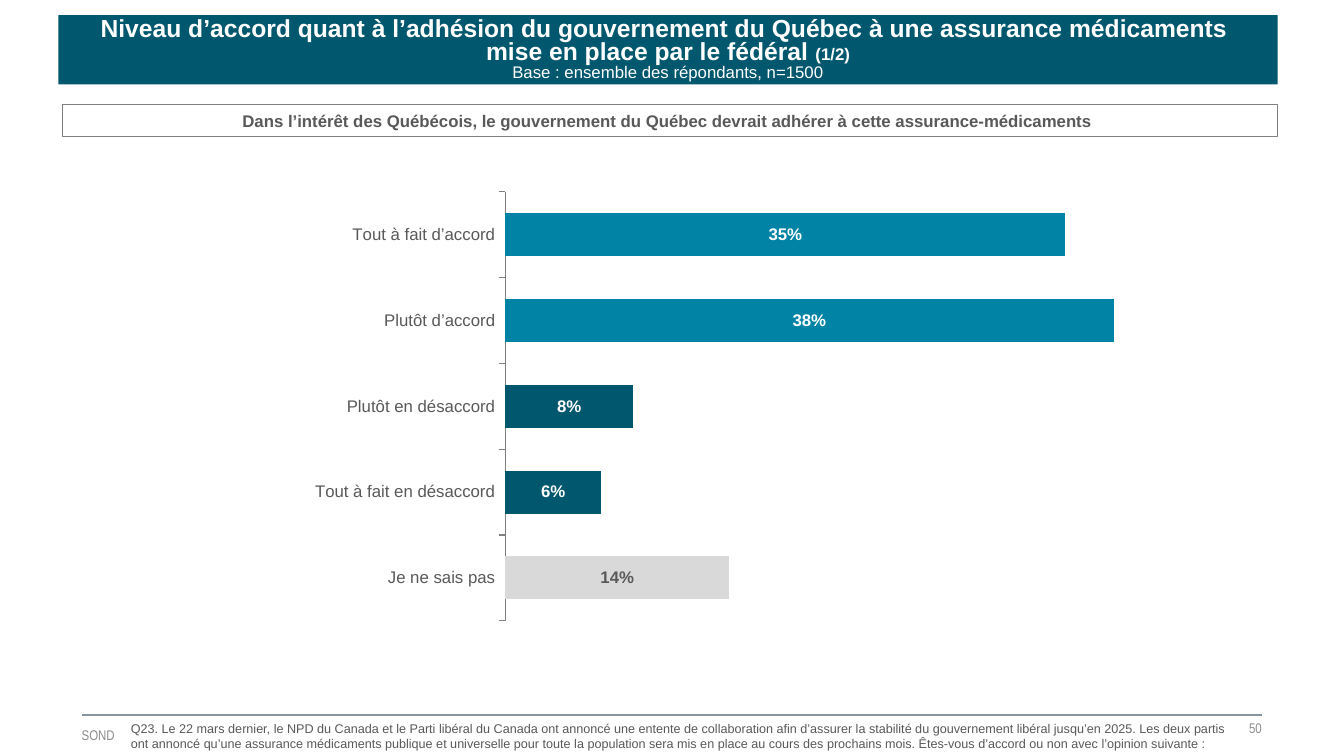
from lxml.etree import SubElement
from pptx import Presentation
from pptx.chart.data import CategoryChartData
from pptx.dml.color import RGBColor
from pptx.enum.chart import XL_CHART_TYPE, XL_LABEL_POSITION, XL_TICK_LABEL_POSITION, XL_TICK_MARK
from pptx.enum.shapes import MSO_CONNECTOR, MSO_SHAPE
from pptx.enum.text import MSO_ANCHOR, MSO_AUTO_SIZE, PP_ALIGN
from pptx.oxml import parse_xml
from pptx.oxml.ns import nsdecls, qn
from pptx.util import Cm, Pt

DARK_TEAL, TEAL, PALE = "00576E", "0083A5", "D9D9D9"
WHITE, TEXT, FOOTER, BORDER, RULE = "FFFFFF", "595959", "8C8C8C", "808080", "88959E"

ANSWERS = [
    ("Tout à fait d’accord", 0.35, TEAL),
    ("Plutôt d’accord", 0.38, TEAL),
    ("Plutôt en désaccord", 0.08, DARK_TEAL),
    ("Tout à fait en désaccord", 0.06, DARK_TEAL),
    ("Je ne sais pas", 0.14, PALE),
]
HEADLINE = [
    [("Niveau d’accord quant à l’adhésion du gouvernement du Québec à une assurance médicaments ", 17.6, True)],
    [("mise en place par le fédéral ", 17.6, True), ("(1/2)", 12, True)],
    [("Base : ensemble des répondants, n=1500", 12, False)],
]
STATEMENT = "Dans l’intérêt des Québécois, le gouvernement du Québec devrait adhérer à cette assurance-médicaments "
QUESTION = (
    "Q23. Le 22 mars dernier, le NPD du Canada et le Parti libéral du Canada ont annoncé une entente de "
    "collaboration afin d’assurer la stabilité du gouvernement libéral jusqu’en 2025. Les deux partis ont annoncé "
    "qu’une assurance médicaments publique et universelle pour toute la population sera mis en place au cours des "
    "prochains mois. Êtes-vous d’accord ou non avec l’opinion suivante :"
)


def rgb(code):
    return RGBColor.from_string(code)


def apply(target, values):
    for name, value in values.items():
        setattr(target, name, value)


class SurveySlide:
    """Draws the parts of a survey result slide in one style."""

    def __init__(self, deck, font="Arial"):
        self.slide = deck.slides.add_slide(deck.slide_layouts[5])
        self.font = font

    def style(self, font, size, color, bold=False, name=None):
        apply(font, {"name": name or self.font, "size": Pt(size), "bold": bold})
        font.color.rgb = rgb(color)

    def frame(self, frame, margins=None):
        apply(frame, {"word_wrap": True, "auto_size": MSO_AUTO_SIZE.NONE, "vertical_anchor": MSO_ANCHOR.MIDDLE})
        if margins is not None:
            sides = ("left", "top", "right", "bottom")
            apply(frame, {f"margin_{side}": Cm(margins) for side in sides})
        return frame.paragraphs[0]

    def title(self, box, lines):
        banner = self.slide.shapes.title
        apply(banner, dict(zip(("left", "top", "width", "height"), map(Cm, box))))
        banner.fill.solid()
        banner.fill.fore_color.rgb = rgb(DARK_TEAL)
        paragraph = self.frame(banner.text_frame, 0)
        apply(paragraph, {"alignment": PP_ALIGN.CENTER, "line_spacing": 0.8, "space_before": Pt(0)})
        for index, line in enumerate(lines):
            if index:
                paragraph.add_line_break()
            for words, size, bold in line:
                run = paragraph.add_run()
                run.text = words
                self.style(run.font, size, WHITE, bold)

    def framed_statement(self, box, words):
        statement = self.slide.shapes.add_shape(MSO_SHAPE.RECTANGLE, *map(Cm, box))
        statement.shadow.inherit = False
        statement.fill.background()
        statement.line.color.rgb = rgb(BORDER)
        statement.line.width = Pt(0.75)
        paragraph = self.frame(statement.text_frame)
        paragraph.alignment = PP_ALIGN.CENTER
        run = paragraph.add_run()
        run.text = words
        self.style(run.font, 12, TEXT, True)

    def text(self, box, words, size, color, name=None, align=PP_ALIGN.LEFT, margins=0):
        note = self.slide.shapes.add_textbox(*map(Cm, box))
        paragraph = self.frame(note.text_frame, margins)
        paragraph.alignment = align
        run = paragraph.add_run()
        run.text = words
        self.style(run.font, size, color, name=name)

    def rule(self, left, right, top):
        rule = self.slide.shapes.add_connector(MSO_CONNECTOR.STRAIGHT, Cm(left), Cm(top), Cm(right), Cm(top))
        rule.line.color.rgb = rgb(RULE)
        rule.line.width = Pt(1.5)
        SubElement(rule.element.spPr, qn("a:effectLst"))

    def bars(self, box, answers, plot_box):
        data = CategoryChartData(number_format="0%")
        data.categories = [answer for answer, _, _ in answers]
        data.add_series("Répondants", [share for _, share, _ in answers])
        chart = self.slide.shapes.add_chart(XL_CHART_TYPE.BAR_CLUSTERED, *map(Cm, box), data).chart
        apply(chart, {"has_legend": False, "has_title": False})
        self.style(chart.font, 12, TEXT)

        apply(chart.category_axis, {
            "reverse_order": True, "major_tick_mark": XL_TICK_MARK.OUTSIDE,
            "tick_label_position": XL_TICK_LABEL_POSITION.LOW, "has_major_gridlines": False,
        })
        chart.category_axis.format.line.color.rgb = rgb(BORDER)
        self.style(chart.category_axis.tick_labels.font, 12, TEXT)
        apply(chart.value_axis, {
            "minimum_scale": 0, "maximum_scale": 0.4, "has_major_gridlines": False, "visible": False,
        })

        plot = chart.plots[0]
        apply(plot, {"gap_width": 100, "vary_by_categories": False})
        shares = plot.series[0]
        apply(shares.data_labels, {
            "show_value": True, "number_format": "0%", "number_format_is_linked": False,
            "position": XL_LABEL_POSITION.CENTER,
        })
        self.style(shares.data_labels.font, 12, WHITE, True)
        for index, (_, _, color) in enumerate(answers):
            bar = shares.points[index]
            bar.format.fill.solid()
            bar.format.fill.fore_color.rgb = rgb(color)
            if color == PALE:
                self.style(bar.data_label.font, 12, TEXT, True)
                bar.data_label.position = XL_LABEL_POSITION.CENTER
        self.place_plot(chart, plot_box)

    def place_plot(self, chart, plot_box):
        settings = [("layoutTarget", "inner"), ("xMode", "edge"), ("yMode", "edge"), *zip("xywh", plot_box)]
        entries = "".join(f'<c:{name} val="{value}"/>' for name, value in settings)
        layout = parse_xml(f'<c:layout {nsdecls("c")}><c:manualLayout>{entries}</c:manualLayout></c:layout>')
        area = chart.element.find(".//" + qn("c:plotArea"))
        for old in area.findall(qn("c:layout")):
            area.remove(old)
        area.insert(0, layout)


def main():
    deck = Presentation()
    apply(deck, {"slide_width": Cm(33.87), "slide_height": Cm(19.05)})
    page = SurveySlide(deck)
    page.title((1.47, 0.38, 30.73, 1.75), HEADLINE)
    page.framed_statement((1.57, 2.64, 30.63, 0.81), STATEMENT)
    page.bars((2.51, 4.5, 29.29, 11.91), ANSWERS, (0.349, 0.028, 0.551, 0.908))
    page.rule(2.06, 31.8, 18.01)
    page.text((22.17, 18.01, 9.63, 0.66), "50", 10, FOOTER, "Arial Narrow", PP_ALIGN.RIGHT)
    page.text((2.06, 18.19, 9.47, 0.66), "SOND", 10, FOOTER, "Arial Narrow")
    page.text((3.05, 18.03, 28.17, 1.02), QUESTION, 9, TEXT, margins=0.25)
    deck.save("out.pptx")


if __name__ == "__main__":
    main()
